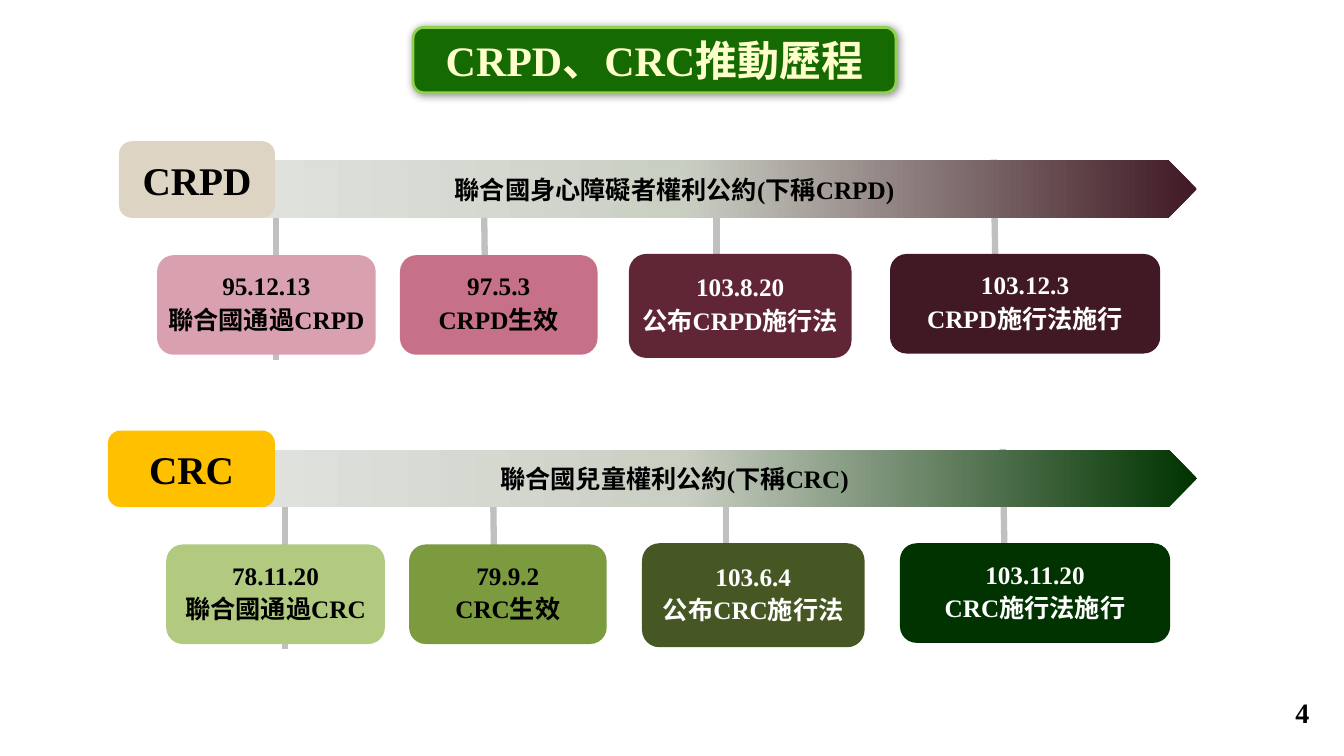
import pptx
import pptx.dml.color
import pptx.enum.shapes
import pptx.enum.text
import pptx.oxml
import pptx.oxml.ns
import pptx.util
from lxml import etree

Cm = pptx.util.Cm
Pt = pptx.util.Pt
SHAPES = pptx.enum.shapes.MSO_SHAPE
ALIGN = pptx.enum.text.PP_ALIGN
ANCHOR = pptx.enum.text.MSO_ANCHOR
LATIN, EAST_ASIAN = "Times New Roman", "Noto Sans CJK SC"
BLACK, WHITE, GREY = "000000", "FFFFFF", "C0C0C0"

TITLE = "CRPD、CRC推動歷程"
PAGE_NUMBER = "4"

# Each event: left, fill, text colour, date, wording
TIMELINES = [
    {
        "label": "CRPD", "label_left": 3.0, "label_fill": "DDD4C4",
        "name": "聯合國身心障礙者權利公約(下稱CRPD)",
        "top": 4.04, "stem_shift": 0, "dark": "401924",
        "events": [
            (3.96, "D9A0B0", BLACK, "95.12.13", "聯合國通過CRPD"),
            (10.08, "C67188", BLACK, "97.5.3", "CRPD生效"),
            (15.85, "602636", WHITE, "103.8.20", "公布CRPD施行法"),
            (22.43, "401924", WHITE, "103.12.3", "CRPD施行法施行"),
        ],
    },
    {
        "label": "CRC", "label_left": 2.72, "label_fill": "FFC000",
        "name": "聯合國兒童權利公約(下稱CRC)",
        "top": 11.33, "stem_shift": 0.23, "dark": "003300",
        "events": [
            (4.19, "B1CA80", BLACK, "78.11.20", "聯合國通過CRC"),
            (10.31, "7C9B3F", BLACK, "79.9.2", "CRC生效"),
            (16.18, "465723", WHITE, "103.6.4", "公布CRC施行法"),
            (22.68, "003300", WHITE, "103.11.20", "CRC施行法施行"),
        ],
    },
]
# Vertical measures count from the top of the timeline's arrow
STEMS = [  # start x, end x, start y, end y
    (6.96, 6.96, 0.13, 5.03),
    (12.19, 12.24, 0.51, 4.22),
    (18.06, 18.06, 0.13, 4.9),
    (25.04, 25.12, -0.02, 4.83),
]
BOXES = [(2.39, 5.51, 2.51), (2.39, 4.98, 2.51), (2.36, 5.61, 2.62), (2.36, 6.81, 2.51)]  # y, w, h
ARROW_LEFT, ARROW_WIDTH, ARROW_HEIGHT = 4.19, 25.98, 1.45
LABEL_RIGHT, LABEL_RISE, LABEL_HEIGHT = 6.93, 0.48, 1.93
TITLE_AREA = (10.41, 0.69, 12.17, 1.65)


def rgb(value):
    return pptx.dml.color.RGBColor.from_string(value)


def write(shape, text, size=18, color=BLACK, align=ALIGN.CENTER, inset=0.13,
          line_spacing=None, gap=0):
    frame = shape.text_frame
    frame.word_wrap = True
    frame.auto_size = pptx.enum.text.MSO_AUTO_SIZE.NONE
    frame.vertical_anchor = ANCHOR.MIDDLE
    frame.margin_left = frame.margin_right = Cm(inset)
    frame.margin_top = frame.margin_bottom = Cm(0.13)
    for index, line in enumerate(text.split("\n")):
        paragraph = frame.add_paragraph() if index else frame.paragraphs[0]
        paragraph.alignment = align
        paragraph.line_spacing = line_spacing
        paragraph.space_before = Pt(gap if index else 0)
        run = paragraph.add_run()
        run.text = line
        run.font.name, run.font.size, run.font.bold = LATIN, Pt(size), True
        run.font.color.rgb = rgb(color)
        latin = run.font._element.find(pptx.oxml.ns.qn("a:latin"))
        east_asian = etree.Element(pptx.oxml.ns.qn("a:ea"), typeface=EAST_ASIAN)
        latin.addnext(east_asian)


def add_block(slide, kind, left, top, width, height, fill=None):
    shape = slide.shapes.add_shape(kind, Cm(left), Cm(top), Cm(width), Cm(height))
    shape.shadow.inherit = False
    shape.line.fill.background()
    if fill:
        shape.fill.solid()
        shape.fill.fore_color.rgb = rgb(fill)
    return shape


def fade(shape, dark):
    """Fill with a gradient from pale at the left to dark at the right."""
    stops = "".join(
        f'<a:gs pos="{position}000"><a:srgbClr val="{color}"/></a:gs>'
        for position, color in ((0, dark), (50, "CACFC4"), (100, "E5E7E3")))
    gradient = pptx.oxml.parse_xml(
        f'<a:gradFill {pptx.oxml.ns.nsdecls("a")} rotWithShape="1"><a:gsLst>{stops}</a:gsLst>'
        '<a:lin ang="10800000" scaled="0"/></a:gradFill>')
    shape._element.spPr.find(pptx.oxml.ns.qn("a:prstGeom")).addnext(gradient)


def add_stem(slide, start_x, start_y, end_x, end_y):
    stem = slide.shapes.add_connector(
        pptx.enum.shapes.MSO_CONNECTOR.STRAIGHT,
        Cm(start_x), Cm(start_y), Cm(end_x), Cm(end_y))
    stem.line.color.rgb = rgb(GREY)
    stem.line.width = Pt(4.5)
    etree.SubElement(stem._element.spPr, pptx.oxml.ns.qn("a:effectLst"))


def add_title(slide):
    plate = add_block(slide, SHAPES.ROUNDED_RECTANGLE, *TITLE_AREA, fill="156B01")
    plate.line.color.rgb = rgb("92D050")
    plate.line.width = Pt(2)
    effects = plate._element.spPr.find(pptx.oxml.ns.qn("a:effectLst"))
    effects.append(pptx.oxml.parse_xml(
        f'<a:outerShdw {pptx.oxml.ns.nsdecls("a")} blurRad="{Pt(6)}" dist="{Pt(1)}" '
        'dir="2700000" algn="ctr" rotWithShape="0"><a:srgbClr val="000000">'
        '<a:alpha val="45000"/></a:srgbClr></a:outerShdw>'))
    title = slide.shapes.title
    title.left, title.top, title.width, title.height = map(Cm, TITLE_AREA)
    write(title, TITLE, size=30, color="FFFFCC")
    title._element.addprevious(plate._element)


def add_timeline(slide, timeline):
    top = timeline["top"]
    for start_x, end_x, start_y, end_y in STEMS:
        shift = timeline["stem_shift"]
        add_stem(slide, start_x + shift, top + start_y, end_x + shift, top + end_y)
    for (left, fill, color, date, wording), (drop, width, height) in zip(timeline["events"], BOXES):
        box = add_block(slide, SHAPES.ROUNDED_RECTANGLE, left, top + drop, width, height, fill)
        write(box, f"{date}\n{wording}", color=color, line_spacing=0.85, gap=5.4)
    arrow = add_block(slide, SHAPES.PENTAGON, ARROW_LEFT, top, ARROW_WIDTH, ARROW_HEIGHT)
    fade(arrow, timeline["dark"])
    write(arrow, timeline["name"])
    left = timeline["label_left"]
    label = add_block(slide, SHAPES.ROUNDED_RECTANGLE, left, top - LABEL_RISE,
                      LABEL_RIGHT - left, LABEL_HEIGHT, timeline["label_fill"])
    write(label, timeline["label"], size=28)


def main():
    presentation = pptx.Presentation()
    presentation.slide_width, presentation.slide_height = Cm(33.87), Cm(19.05)
    slide = presentation.slides.add_slide(presentation.slide_layouts[5])
    add_title(slide)
    for timeline in TIMELINES:
        add_timeline(slide, timeline)
    number = slide.shapes.add_textbox(Cm(31.75), Cm(17.55), Cm(1.5), Cm(0.79))
    write(number, PAGE_NUMBER, size=20, align=ALIGN.RIGHT, inset=0.25)
    presentation.save("out.pptx")


if __name__ == "__main__":
    main()
